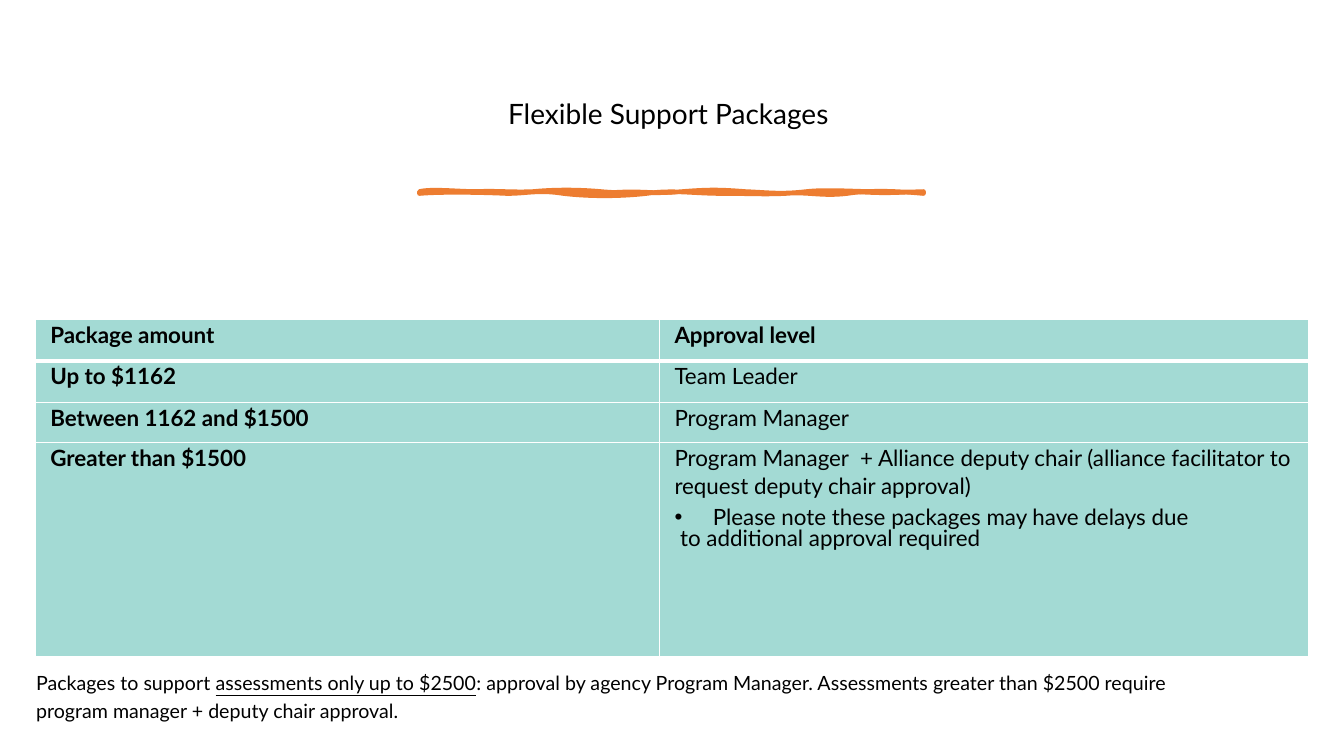
"""Build the slide on approval levels for flexible support packages."""
from dataclasses import dataclass

from lxml.etree import SubElement
from pptx import Presentation
from pptx.dml.color import RGBColor
from pptx.enum.text import MSO_ANCHOR, PP_ALIGN
from pptx.oxml.ns import qn
from pptx.util import Inches, Pt

FONT = "Lato"
BLACK, WHITE, TEAL, ORANGE = "000000", "FFFFFF", "A3DAD4", "ED7D31"


@dataclass
class Run:
    text: str
    bold: bool = False
    underline: bool = False


@dataclass
class Para:
    runs: list[Run]
    line_spacing: float | Pt = 1.07
    space_after: float = 8
    align: PP_ALIGN = PP_ALIGN.LEFT
    bullet: bool = False


def color(hex_code: str) -> RGBColor:
    """Turn a hex string into a colour."""
    return RGBColor.from_string(hex_code)


def add_bullet(paragraph, indent: float) -> None:
    """Give the paragraph a hanging bullet."""
    properties = paragraph._p.get_or_add_pPr()
    properties.set("marL", str(Inches(indent)))
    properties.set("indent", str(-Inches(indent)))
    SubElement(properties, qn("a:buFont"), typeface="Arial")
    SubElement(properties, qn("a:buChar"), char="•")


def write(frame, paras: list[Para], size: float) -> None:
    """Fill a text frame run by run."""
    frame.word_wrap = True
    for index, para in enumerate(paras):
        paragraph = frame.add_paragraph() if index else frame.paragraphs[0]
        paragraph.alignment = para.align
        paragraph.line_spacing = para.line_spacing
        paragraph.space_after = Pt(para.space_after)
        if para.bullet:
            add_bullet(paragraph, 0.38)
        for part in para.runs:
            run = paragraph.add_run()
            run.text = part.text
            run.font.name = FONT
            run.font.size = Pt(size)
            run.font.bold = part.bold
            run.font.underline = part.underline
            run.font.color.rgb = color(BLACK)


def add_border(cell, side: str, width: float) -> None:
    """Draw one white border of a cell."""
    line = SubElement(cell._tc.get_or_add_tcPr(), qn(f"a:ln{side}"), w=str(Pt(width)))
    SubElement(SubElement(line, qn("a:solidFill")), qn("a:srgbClr"), val=WHITE)


def add_title(slide) -> None:
    """Place the centred title."""
    frame = slide.shapes.add_textbox(
        Inches(0.7), Inches(0.46), Inches(11.93), Inches(1.37)).text_frame
    frame.vertical_anchor = MSO_ANCHOR.MIDDLE
    title = Para([Run("Flexible Support Packages ")], 0.9, 0, PP_ALIGN.CENTER)
    write(frame, [title], 20)


def add_curves(path_list, points: list[tuple[float, float]], left: float, top: float,
               size: tuple[float, float], **options: str) -> None:
    """Add a closed chain of cubic curves to a custom outline."""
    width, height = (str(Inches(length)) for length in size)
    outline = SubElement(path_list, qn("a:path"), w=width, h=height, **options)
    groups = [points[:1]] + [points[i:i + 3] for i in range(1, len(points), 3)]
    for group in groups:
        command = SubElement(outline, qn("a:cubicBezTo" if len(group) == 3 else "a:moveTo"))
        for x, y in group:
            SubElement(command, qn("a:pt"), x=str(Inches(x - left)), y=str(Inches(y - top)))
    SubElement(outline, qn("a:close"))


def add_brush_stroke(slide) -> None:
    """Draw the wavy orange rule under the title."""
    left, top, width, height = 4.16, 1.9, 5, 0.02
    edge = [
        (4.16, 1.9), (4.28, 1.87), (4.54, 1.9), (4.73, 1.9), (4.92, 1.89),
        (5.09, 1.91), (5.29, 1.9), (5.49, 1.88), (5.74, 1.88), (5.96, 1.9),
        (6.17, 1.92), (6.53, 1.92), (6.77, 1.9), (7.02, 1.88), (7.14, 1.88),
        (7.39, 1.9), (7.63, 1.91), (7.74, 1.93), (8, 1.9), (8.26, 1.87),
        (8.67, 1.92), (9.16, 1.9), (9.17, 1.91), (9.16, 1.91), (9.16, 1.92),
        (8.95, 1.9), (8.65, 1.88), (8.4, 1.92), (8.15, 1.95), (8.01, 1.9),
        (7.79, 1.92), (7.56, 1.93), (7.47, 1.92), (7.17, 1.92), (6.87, 1.92),
        (6.67, 1.88), (6.41, 1.92), (6.14, 1.95), (5.85, 1.95), (5.59, 1.92),
        (5.34, 1.88), (5.23, 1.92), (5.03, 1.92), (4.83, 1.91), (4.38, 1.9),
        (4.16, 1.92), (4.16, 1.91), (4.16, 1.9), (4.16, 1.9)]
    body = [
        (4.16, 1.9), (4.32, 1.89), (4.52, 1.88), (4.78, 1.9), (5.03, 1.91),
        (5.08, 1.92), (5.34, 1.9), (5.6, 1.88), (5.74, 1.92), (5.96, 1.9),
        (6.18, 1.87), (6.39, 1.88), (6.67, 1.9), (6.95, 1.91), (7.24, 1.87),
        (7.44, 1.9), (7.63, 1.92), (8.02, 1.88), (8.25, 1.9), (8.48, 1.91),
        (8.72, 1.93), (9.16, 1.9), (9.16, 1.9), (9.16, 1.91), (9.16, 1.92),
        (8.79, 1.94), (8.76, 1.94), (8.4, 1.92), (8.04, 1.89), (7.96, 1.91),
        (7.59, 1.92), (7.21, 1.92), (7.16, 1.88), (6.77, 1.92), (6.39, 1.96),
        (6.37, 1.9), (6.21, 1.92), (6.04, 1.93), (5.72, 1.93), (5.44, 1.92),
        (5.17, 1.9), (5.04, 1.91), (4.78, 1.92), (4.52, 1.92), (4.41, 1.89),
        (4.16, 1.92), (4.16, 1.91), (4.16, 1.9), (4.16, 1.9)]
    right, bottom = Inches(left + width), Inches(top + height)
    builder = slide.shapes.build_freeform(Inches(left), Inches(top))
    builder.add_line_segments([(right, Inches(top)), (right, bottom), (Inches(left), bottom)])
    stroke = builder.convert_to_shape()
    path_list = stroke._element.spPr.find(qn("a:custGeom")).find(qn("a:pathLst"))
    path_list.clear()
    add_curves(path_list, edge, left, top, (width, height), fill="none")
    add_curves(path_list, body, left, top, (width, height), stroke="0")
    stroke.shadow.inherit = False
    stroke.fill.solid()
    stroke.fill.fore_color.rgb = color(ORANGE)
    stroke.line.color.rgb = color(ORANGE)
    stroke.line.width = Pt(3.25)


def add_approval_table(slide) -> None:
    """Place the table of amounts and approval levels."""
    levels = [
        ("Package amount", [Para([Run("Approval level", bold=True)])]),
        ("Up to $1162", [Para([Run("Team Leader")])]),
        ("Between 1162 and $1500", [Para([Run("Program Manager")])]),
        ("Greater than $1500", [
            Para([Run("Program Manager  + Alliance deputy chair (alliance facilitator "
                      "to request deputy chair approval)")]),
            Para([Run("Please note these packages may have delays due")],
                 Pt(13.5), 2, bullet=True),
            Para([Run(" to additional approval required")], Pt(13.5), 2)]),
    ]
    widths, heights = (6.19, 6.44), (0.41, 0.41, 0.4, 2.12)
    table = slide.shapes.add_table(
        len(heights), len(widths), Inches(0.35), Inches(3.17),
        Inches(sum(widths)), Inches(sum(heights))).table
    table.horz_banding = False
    for column, width in zip(table.columns, widths):
        column.width = Inches(width)
    for index, (amount, approval) in enumerate(levels):
        table.rows[index].height = Inches(heights[index])
        contents = ([Para([Run(amount, bold=True)])], approval)
        for cell, paras in zip(table.rows[index].cells, contents):
            cell.margin_left = cell.margin_right = Inches(0.15)
            cell.margin_top = cell.margin_bottom = 0
            for side in "LRTB":
                is_header_edge = (index, side) in ((0, "B"), (1, "T"))
                add_border(cell, side, 3 if is_header_edge else 1)
            cell.fill.solid()
            cell.fill.fore_color.rgb = color(TEAL)
            write(cell.text_frame, paras, 16)


def add_assessment_note(slide) -> None:
    """Place the note on assessments below the table."""
    frame = slide.shapes.add_textbox(
        Inches(0.26), Inches(6.11), Inches(11.56), Inches(1.09)).text_frame
    frame.margin_top = Inches(0.5)
    note = Para([
        Run("Packages to support "),
        Run("assessments only up to $2500", underline=True),
        Run(": approval by agency Program Manager. Assessments greater than $2500 "
            "require program manager + deputy chair approval.")], 1.2)
    write(frame, [note], 14)


def main() -> None:
    """Build and save the slide."""
    deck = Presentation()
    deck.slide_width, deck.slide_height = Inches(13.33), Inches(7.5)
    slide = deck.slides.add_slide(deck.slide_layouts[6])
    add_title(slide)
    add_brush_stroke(slide)
    add_approval_table(slide)
    add_assessment_note(slide)
    deck.save("out.pptx")


if __name__ == "__main__":
    main()
